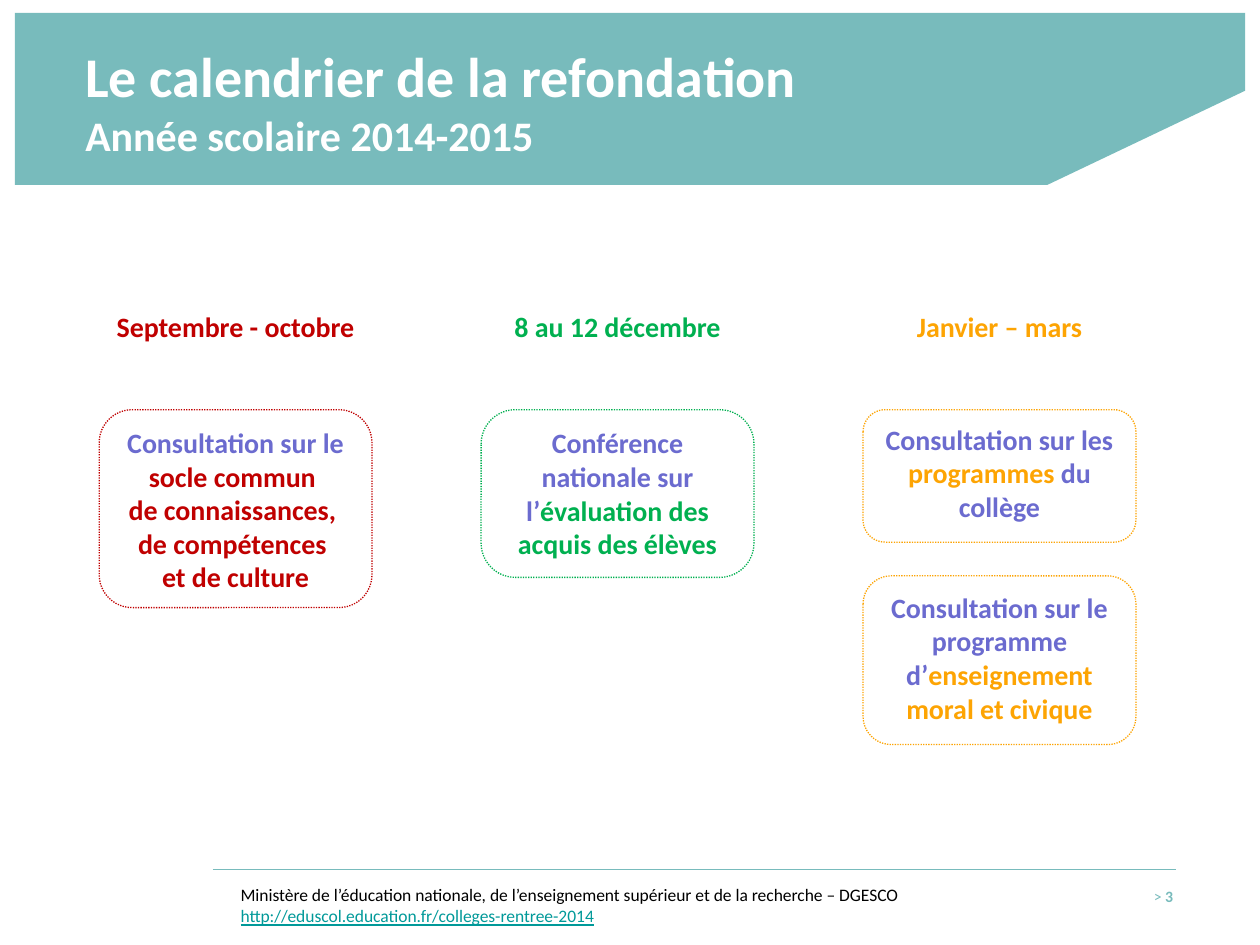
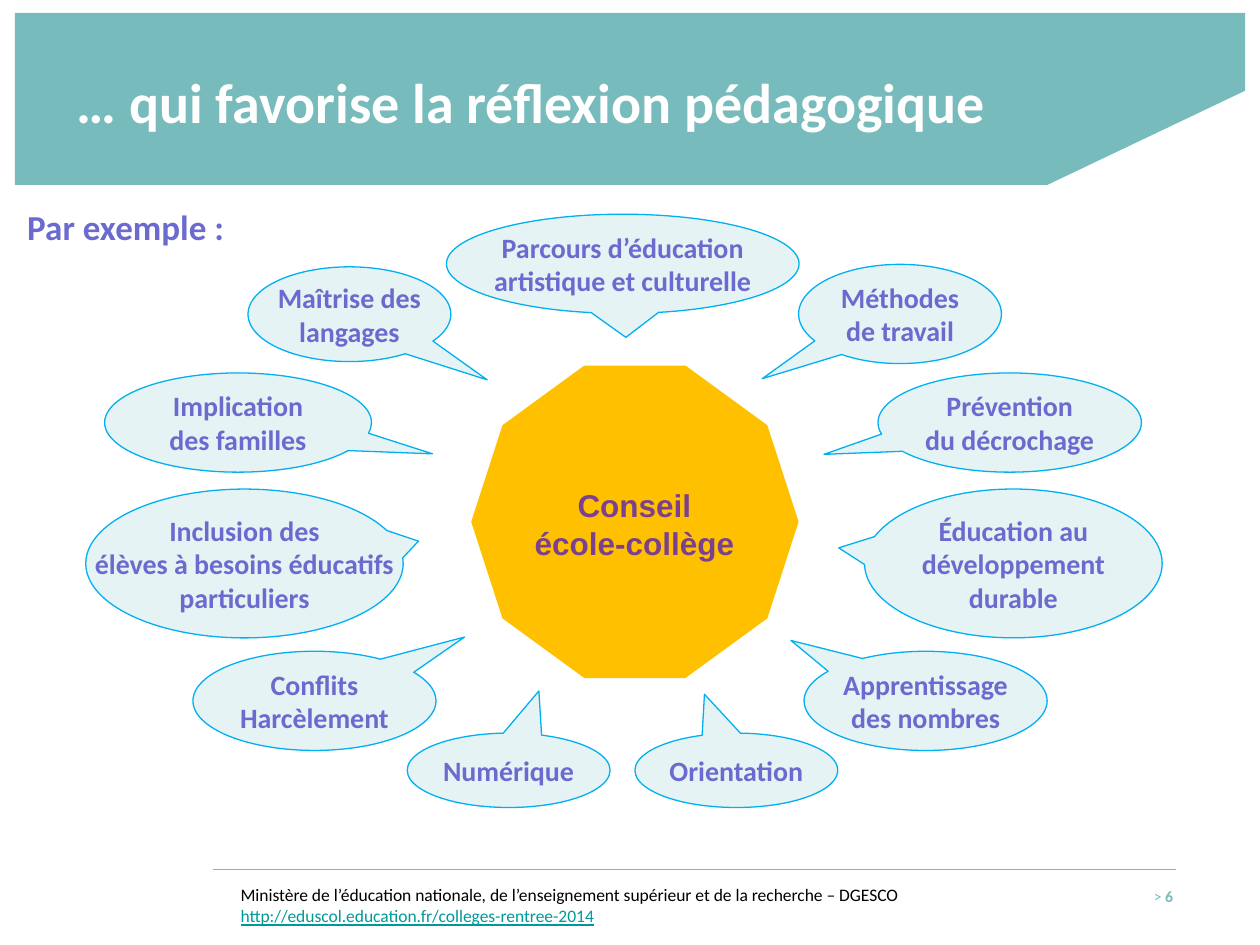
from copy import deepcopy

from lxml.etree import SubElement
from pptx import Presentation
from pptx.dml.color import RGBColor
from pptx.enum.dml import MSO_LINE
from pptx.enum.shapes import MSO_CONNECTOR, MSO_SHAPE
from pptx.enum.text import MSO_ANCHOR, PP_ALIGN
from pptx.oxml.ns import qn
from pptx.util import Cm, Pt

HUES = {
    "teal": "78BBBC", "white": "FFFFFF", "black": "000000", "link": "009999",
    "violet": "6B6BCF", "red": "C00000", "green": "00B050", "orange": "FDA403",
    "pale": "E6F3F4", "sky": "00B0F0", "gold": "FFC000", "plum": "7B418E",
}


def hue(name):
    return RGBColor.from_string(HUES[name])


def place(box):
    return [Cm(v) for v in box]


def write(shape, paras, size=16, color="violet", bold=True, font="Calibri",
          align=PP_ALIGN.LEFT, anchor=MSO_ANCHOR.TOP, wrap=True, inset=None):
    """Each paragraph is a list of (text, changes) runs; a newline breaks the line."""
    frame = shape.text_frame
    frame.word_wrap = wrap
    frame.vertical_anchor = anchor
    if inset is not None:
        frame.margin_left = frame.margin_right = Cm(inset)
        frame.margin_top = frame.margin_bottom = Cm(inset)
    for i, runs in enumerate(paras):
        para = frame.add_paragraph() if i else frame.paragraphs[0]
        para.alignment = align
        for text, diff in runs:
            look = {"size": size, "color": color, "bold": bold, "line": False} | diff
            for n, part in enumerate(text.split("\n")):
                if n:
                    para.add_line_break()
                    para._p[-1].append(deepcopy(run._r.rPr))
                if not part:
                    continue
                run = para.add_run()
                run.text = part
                run.font.name = font
                run.font.size = Pt(look["size"])
                run.font.bold = look["bold"]
                run.font.underline = look["line"] or None
                run.font.color.rgb = hue(look["color"])


def label(slide, box, paras, **look):
    write(slide.shapes.add_textbox(*place(box)), paras, **look)


def paint(shape, fill=None, line=None, dash=None):
    shape.shadow.inherit = False
    if fill:
        shape.fill.solid()
        shape.fill.fore_color.rgb = hue(fill)
    else:
        shape.fill.background()
    if line:
        shape.line.color.rgb = hue(line)
        shape.line.width = Pt(0.75)
        if dash:
            shape.line.dash_style = dash
    else:
        shape.line.fill.background()


def header(slide, box, runs, left):
    # Band with its cut corner
    x, y, w, h = box
    right, low = x + w, y + h
    pen = slide.shapes.build_freeform(Cm(right), Cm(y))
    pen.add_line_segments([(Cm(a), Cm(b)) for a, b in [
        (x, y), (x, low), (right - 3.99, low), (right, y + 1.57)]])
    paint(pen.convert_to_shape(), "teal")
    # Title
    label(slide, (x + left, y + 0.07, 22.83, 3.4), [runs],
          size=32, color="white", anchor=MSO_ANCHOR.MIDDLE)


def footer(slide, box, page):
    x, y, w, h = box
    # Rule
    rule = slide.shapes.add_connector(
        MSO_CONNECTOR.STRAIGHT, Cm(x), Cm(y), Cm(x + w), Cm(y))
    rule.line.color.rgb = hue("teal")
    rule.line.width = Pt(0.75)
    SubElement(rule._element.spPr, qn("a:effectLst"))
    # Page number and source
    label(slide, (x + 17.02, y + 0.22, 2.59, h),
          [[("> ", {"bold": False}), (str(page), {})]],
          size=9, color="teal", align=PP_ALIGN.RIGHT)
    label(slide, (x + 0.31, y + 0.17, 16.92, 0.81), [
        [("Ministère de l’éducation nationale, de l’enseignement supérieur "
          "et de la recherche – DGESCO", {})],
        [("http://eduscol.education.fr/colleges-rentree-2014",
          {"color": "link", "line": True})],
    ], size=10, color="black", bold=False)


def start(deck, page, title, left):
    slide = deck.slides.add_slide(deck.slide_layouts[6])
    header(slide, (0.3, 0.26, 24.8, 3.47), title, left)
    footer(slide, (4.29, 17.53, 19.41, 1.27), page)
    return slide


def column(slide, box, color, date, cards):
    x, y, w, h = box
    label(slide, (x, y, w, 0.94), [[(date, {})]], color=color, align=PP_ALIGN.CENTER)
    # Dotted cards: drop below the date, height, corner, runs
    for drop, tall, bend, runs in cards:
        card = slide.shapes.add_shape(
            MSO_SHAPE.ROUNDED_RECTANGLE, *place((x, y + drop, w, tall)))
        card.adjustments[0] = bend
        paint(card, line=color, dash=MSO_LINE.ROUND_DOT)
        write(card, [[(text, {"color": color} if key else {}) for text, key in runs]],
              align=PP_ALIGN.CENTER)


def agenda(deck):
    slide = start(deck, 3, [("Le calendrier de la refondation\n", {}),
                            ("Année scolaire 2014-2015", {"size": 24})], 1.17)
    # Text runs marked True take the colour of their column
    plan = [
        ("red", "Septembre - octobre", [
            (2.14, 3.99, 0.167, [
                ("Consultation sur le ", False),
                ("socle commun \nde connaissances, \nde compétences \net de culture",
                 True)])]),
        ("green", "8 au 12 décembre", [
            (2.14, 3.38, 0.204, [
                ("Conférence nationale sur l’", False),
                ("évaluation des acquis des élèves", True)])]),
        ("orange", "Janvier – mars", [
            (2.14, 2.67, 0.167, [
                ("Consultation sur les ", False),
                ("programmes ", True), ("du collège", False)]),
            (5.49, 3.4, 0.167, [
                ("Consultation sur le programme d’", False),
                ("enseignement moral et civique", True)])]),
    ]
    for i, (color, date, cards) in enumerate(plan):
        column(slide, (2 + 7.7 * i, 6.12, 5.5, 8.89), color, date, cards)


def wheel(slide, box, themes):
    x, y, w, h = box
    # Hub
    hub = slide.shapes.add_shape(
        MSO_SHAPE.DECAGON, *place((x + 8.2, y + 3.05, 6.6, 6.3)))
    paint(hub, "gold")
    label(slide, (x + 8.86, y + 5.36, 5.26, 1.68),
          [[("Conseil", {})], [("école-collège", {})]],
          size=18, color="plum", font="Arial", align=PP_ALIGN.CENTER)
    # Callouts pointing at the hub
    for text, left, top, wide, tall, *tip in themes:
        call = slide.shapes.add_shape(
            MSO_SHAPE.OVAL_CALLOUT, *place((x + left, y + top, wide, tall)))
        for i, shift in enumerate(tip):
            call.adjustments[i] = shift
        paint(call, "pale", "sky")
        write(call, [[(text, {})]], align=PP_ALIGN.CENTER,
              anchor=MSO_ANCHOR.MIDDLE, wrap=False, inset=0)


def council(deck):
    slide = start(deck, 6, [("… qui favorise la réflexion pédagogique", {})], 1)
    label(slide, (0.3, 4.01, 5.05, 1.12), [[("Par exemple :", {})]], size=20)
    # Text, left, top, width, height, then the tip of the callout
    wheel(slide, (1.3, 4.32, 22.6, 12.4), [
        ("Parcours d’éducation\nartistique et culturelle",
         7.7, 0, 7.11, 2, 0.009, 0.741),
        ("Méthodes\nde travail", 14.8, 1.01, 4.09, 2, -0.679, 0.652),
        ("Prévention\ndu décrochage", 16.4, 3.2, 5.31, 2, -0.705, 0.32),
        ("Éducation au\ndéveloppement\ndurable",
         16.13, 5.54, 6, 3, -0.587, -0.105),
        ("Apprentissage\ndes nombres", 14.91, 8.81, 4.9, 2, -0.554, -0.609),
        ("Orientation", 11.5, 10.46, 4.09, 1.5, -0.157, -1.023),
        ("Numérique", 6.91, 10.46, 4.09, 1.5, 0.149, -1.067),
        ("Conflits\nHarcèlement", 2.59, 8.81, 4.9, 2, 0.617, -0.643),
        ("Inclusion des\nélèves à besoins éducatifs\nparticuliers",
         0.43, 5.54, 6.4, 3, 0.548, -0.15),
        ("Implication\ndes familles", 0.81, 3.2, 5.38, 2, 0.729, 0.315),
        ("Maîtrise des\nlangages", 3.7, 1.06, 4.09, 1.91, 0.679, 0.693),
    ])


def main():
    deck = Presentation()
    deck.slide_width, deck.slide_height = Cm(25.4), Cm(19.05)
    agenda(deck)
    council(deck)
    deck.save("out.pptx")


if __name__ == "__main__":
    main()
